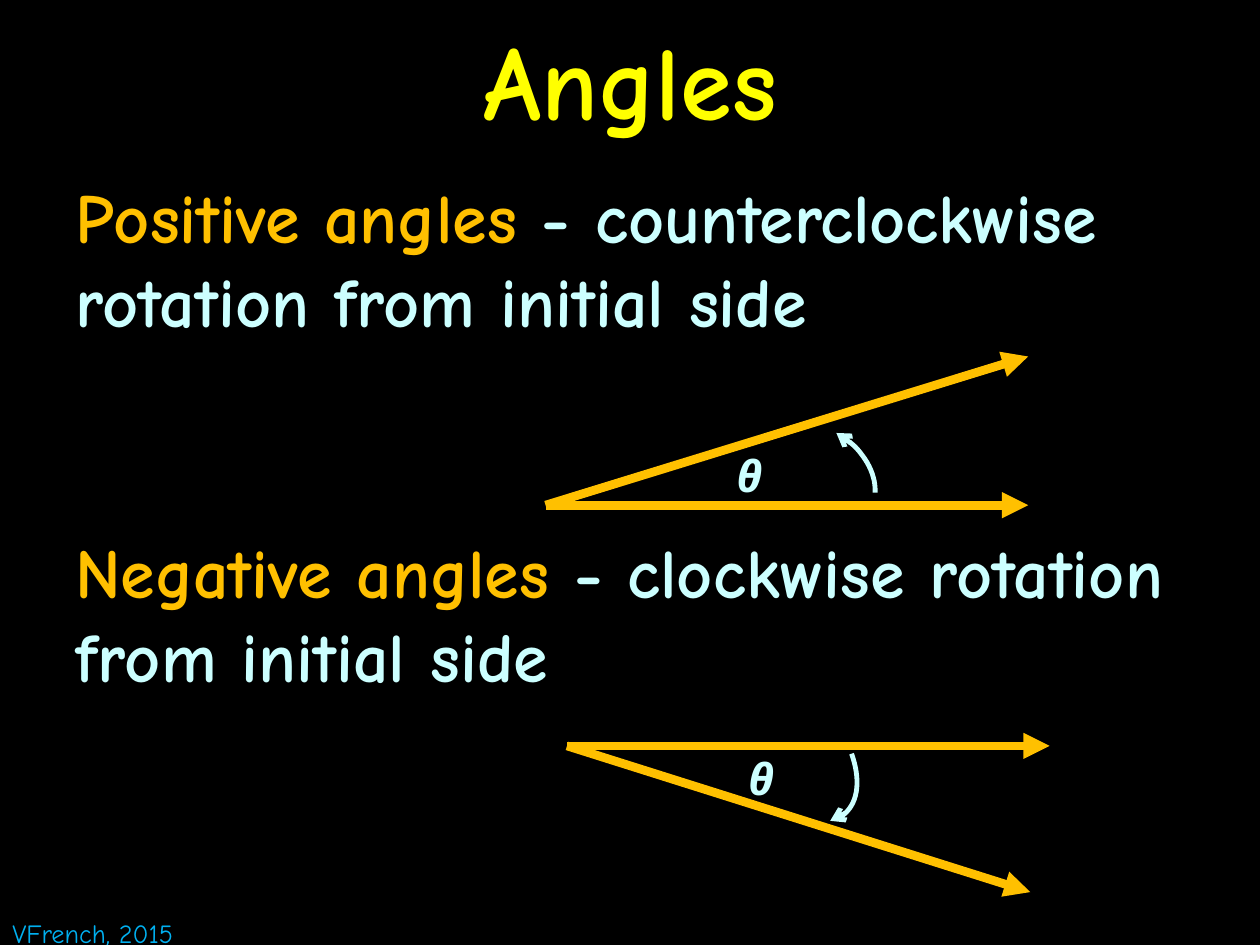
import pptx
import pptx.dml.color
import pptx.enum.shapes
import pptx.enum.text
import pptx.oxml
import pptx.oxml.ns
import pptx.util
from lxml import etree

RGBColor = pptx.dml.color.RGBColor
BLACK = RGBColor(0x00, 0x00, 0x00)
YELLOW = RGBColor(0xFF, 0xFF, 0x00)
ORANGE = RGBColor(0xFF, 0xC0, 0x00)
PALE_CYAN = RGBColor(0xCC, 0xFF, 0xFF)
BLUE = RGBColor(0x00, 0xB0, 0xF0)

FONT = "Comic Neue"
WIDTH = pptx.util.Inches(10)
HEIGHT = pptx.util.Inches(7.5)


def percent_box(left, top, width, height):
    """Turn percentages of the slide into lengths."""
    return tuple(int(share * side / 100) for share, side in
                 zip((left, top, width, height), (WIDTH, HEIGHT, WIDTH, HEIGHT)))


def inner_box(box, shares):
    """Place a part by its shares of the surrounding box."""
    left, top, width, height = box
    x, y, part_width, part_height = shares
    return (int(left + x * width), int(top + y * height),
            int(part_width * width), int(part_height * height))


def add_run(paragraph, text, size, color, **formats):
    run = paragraph.add_run()
    run.text = text
    run.font.color.rgb = color
    values = {"name": FONT, "size": pptx.util.Pt(size), **formats}
    for name, value in values.items():
        setattr(run.font, name, value)


def add_text_box(shapes, box, wrap=True):
    frame = shapes.add_textbox(*box).text_frame
    frame.word_wrap = wrap
    return frame


def style_line(shape, color, width, arrow_end, arrow_type):
    shape.line.color.rgb = color
    shape.line.width = pptx.util.Pt(width)
    line = shape.line._get_or_add_ln()
    etree.SubElement(line, pptx.oxml.ns.qn(f"a:{arrow_end}"), type=arrow_type)


def add_ray(shapes, start, end):
    straight = pptx.enum.shapes.MSO_CONNECTOR.STRAIGHT
    ray = shapes.add_connector(straight, *start, *end)
    style_line(ray, ORANGE, 5, "tailEnd", "triangle")
    properties = ray._element.spPr
    etree.SubElement(properties, pptx.oxml.ns.qn("a:effectLst"))


def add_rotation_arc(shapes, box, rotation, angles, flipped):
    arc = shapes.add_shape(pptx.enum.shapes.MSO_SHAPE.ARC, *box)
    arc.shadow.inherit = False
    arc.fill.background()
    arc.rotation = rotation
    for index, angle in enumerate(angles):
        arc.adjustments[index] = angle
    if flipped:
        arc._element.spPr.get_or_add_xfrm().set("flipH", "1")
    style_line(arc, PALE_CYAN, 2.75, "headEnd", "arrow")


def add_angle(slide, box, vertex, ray_ends, arc, label):
    """Draw two rays from a vertex, with the turn between them."""
    shapes = slide.shapes.add_group_shape().shapes
    start = inner_box(box, (*vertex, 0, 0))[:2]
    for ray_end in ray_ends:
        add_ray(shapes, start, inner_box(box, (*ray_end, 0, 0))[:2])
    add_rotation_arc(shapes, inner_box(box, arc["shares"]), arc["rotation"],
                     arc["angles"], arc["flipped"])
    frame = add_text_box(shapes, inner_box(box, label), wrap=False)
    add_run(frame.paragraphs[0], "θ", 25, PALE_CYAN, bold=True, italic=True)


def add_title(slide, box):
    frame = add_text_box(slide.shapes, box)
    frame.vertical_anchor = pptx.enum.text.MSO_ANCHOR.MIDDLE
    paragraph = frame.paragraphs[0]
    paragraph.alignment = pptx.enum.text.PP_ALIGN.CENTER
    add_run(paragraph, "Angles", 60, YELLOW, bold=True)


def add_definitions(slide, box):
    definitions = (
        ("Positive angles ", "- counterclockwise rotation from initial side", 0),
        ("Negative angles ", "- clockwise rotation from initial side", 107),
    )
    frame = add_text_box(slide.shapes, box)
    for index, (term, meaning, gap) in enumerate(definitions):
        paragraph = frame.add_paragraph() if index else frame.paragraphs[0]
        paragraph.space_before = pptx.util.Pt(gap)
        add_run(paragraph, term, 40, ORANGE, bold=True)
        add_run(paragraph, meaning, 40, PALE_CYAN, bold=True)


def add_footer(slide, box):
    frame = add_text_box(slide.shapes, box, wrap=False)
    add_run(frame.paragraphs[0], "VFrench, 2015", 15, BLUE)


def main():
    presentation = pptx.Presentation()
    presentation.slide_width, presentation.slide_height = WIDTH, HEIGHT
    slide = presentation.slides.add_slide(presentation.slide_layouts[6])
    slide.background.fill.solid()
    slide.background.fill.fore_color.rgb = BLACK

    add_title(slide, percent_box(0, 0, 100, 16.67))
    add_definitions(slide, percent_box(5, 17.73, 95, 82.27))
    add_angle(
        slide, percent_box(43.3, 37.73, 38.3, 15.73),
        vertex=(0, 1), ray_ends=((1, 1), (1, 0)),
        arc={"shares": (0.41, 0.47, 0.28, 0.7), "rotation": 29.2,
             "angles": (162, 206.03), "flipped": False},
        label=(0.37, 0.58, 0.11, 0.44))
    add_angle(
        slide, percent_box(45, 78.93, 38.3, 15.47),
        vertex=(0, 0), ray_ends=((1, 0), (0.96, 1)),
        arc={"shares": (0.27, -0.36, 0.37, 0.72), "rotation": 229.5,
             "angles": (209.83, 25.6), "flipped": True},
        label=(0.35, 0, 0.11, 0.45))
    add_footer(slide, percent_box(0, 96.4, 16.9, 4.67))
    presentation.save("out.pptx")


if __name__ == "__main__":
    main()
